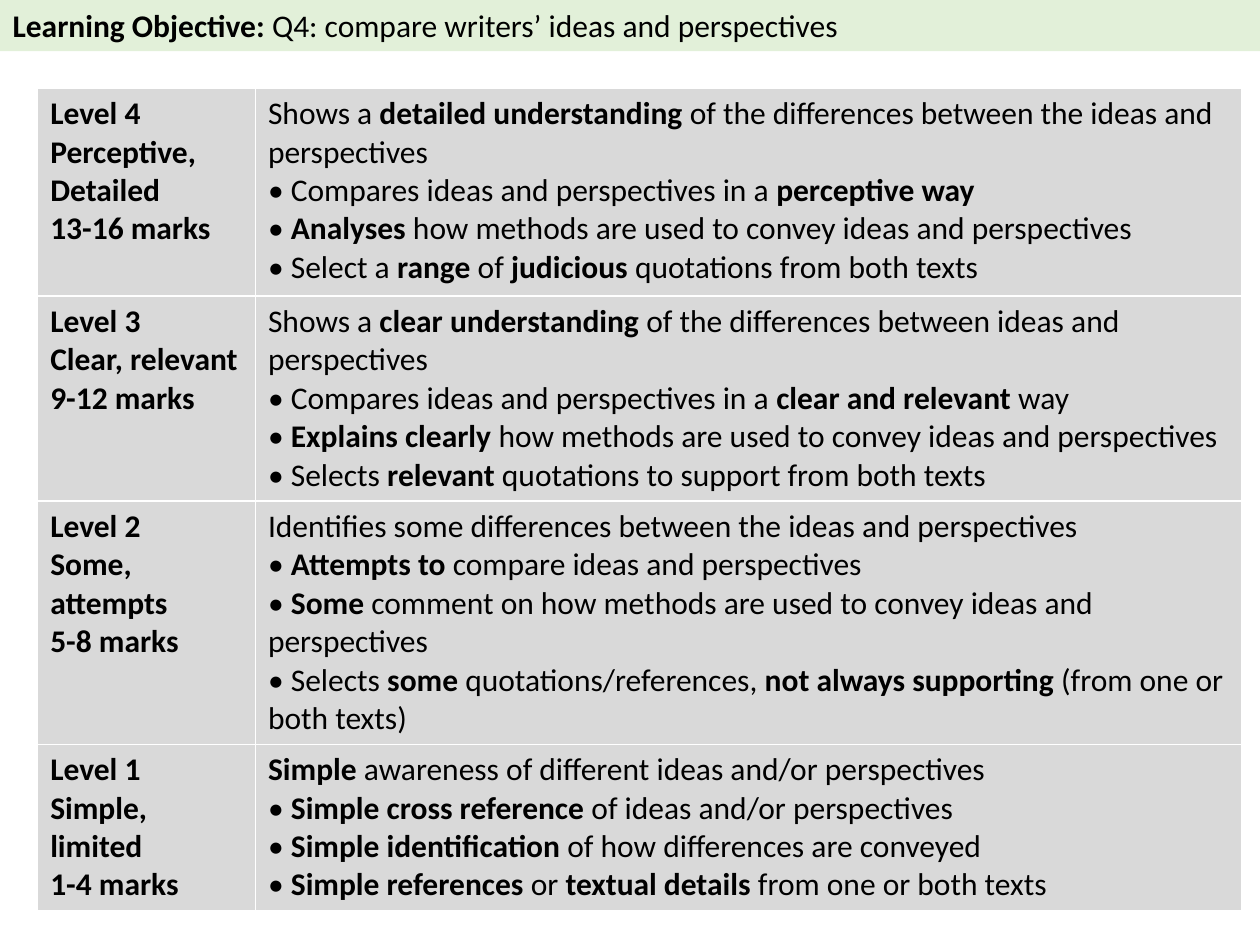
from dataclasses import dataclass

import pptx
import pptx.dml.color
import pptx.enum.text
import pptx.util
from pptx.util import Cm

BLACK = pptx.dml.color.RGBColor(0x00, 0x00, 0x00)
PALE_GREEN = pptx.dml.color.RGBColor(0xE2, 0xF0, 0xD9)
LIGHT_GREY = pptx.dml.color.RGBColor(0xD9, 0xD9, 0xD9)

FONT_FORMAT = {"name": "Calibri", "size": pptx.util.Pt(18)}
COLUMN_WIDTHS = (Cm(4.39), Cm(19.89))


@dataclass
class Level:
    """One band of the mark scheme; ** switches bold on and off."""
    label: list[str]
    summary: str
    criteria: list[str]
    height: pptx.util.Length


LEVELS = [
    Level(
        ["Level 4", "Perceptive, Detailed", "13-16 marks"],
        "Shows a **detailed understanding** of the differences between the ideas and perspectives",
        ["Compares ideas and perspectives in a **perceptive way**",
         "**Analyses** how methods are used to convey ideas and perspectives",
         "Select a **range** of **judicious** quotations from both texts"],
        Cm(4.19),
    ),
    Level(
        ["Level 3", "Clear, relevant", "9-12 marks"],
        "Shows a **clear understanding** of the differences between ideas and perspectives",
        ["Compares ideas and perspectives in a **clear and relevant** way",
         "**Explains clearly** how methods are used to convey ideas and perspectives",
         "Selects **relevant** quotations to support from both texts"],
        Cm(4.06),
    ),
    Level(
        ["Level 2", "Some, attempts", "5-8 marks"],
        "Identifies some differences between the ideas and perspectives",
        ["**Attempts to** compare ideas and perspectives",
         "**Some** comment on how methods are used to convey ideas and perspectives",
         "Selects **some** quotations/references, **not always supporting** (from one or both texts)"],
        Cm(4.83),
    ),
    Level(
        ["Level 1", "Simple, limited", "1-4 marks"],
        "**Simple** awareness of different ideas and/or perspectives",
        ["**Simple cross reference** of ideas and/or perspectives",
         "**Simple identification** of how differences are conveyed",
         "**Simple references** or **textual details** from one or both texts"],
        Cm(3.3),
    ),
]


def write_lines(text_frame, lines: list[str]) -> None:
    """Write one paragraph per line, with the parts between ** in bold."""
    for index, line in enumerate(lines):
        paragraph = text_frame.add_paragraph() if index else text_frame.paragraphs[0]
        paragraph.alignment = pptx.enum.text.PP_ALIGN.LEFT
        for part_index, part in enumerate(line.split("**")):
            if not part:
                continue
            run = paragraph.add_run()
            run.text = part
            for name, value in FONT_FORMAT.items():
                setattr(run.font, name, value)
            run.font.bold = part_index % 2 == 1
            run.font.color.rgb = BLACK


def add_objective(slide) -> None:
    title = slide.shapes.title
    bounds = {"left": 0, "top": 0, "width": Cm(25.4), "height": Cm(1.03)}
    for name, value in bounds.items():
        setattr(title, name, value)
    title.fill.solid()
    title.fill.fore_color.rgb = PALE_GREEN
    frame_format = {
        "word_wrap": True,
        "auto_size": pptx.enum.text.MSO_AUTO_SIZE.NONE,
        "vertical_anchor": pptx.enum.text.MSO_ANCHOR.TOP,
    }
    for name, value in frame_format.items():
        setattr(title.text_frame, name, value)
    write_lines(title.text_frame,
                ["**Learning Objective:** Q4: compare writers’ ideas and perspectives"])


def add_mark_scheme(slide, levels: list[Level]) -> None:
    table = slide.shapes.add_table(
        len(levels), len(COLUMN_WIDTHS), Cm(0.76), Cm(1.78),
        sum(COLUMN_WIDTHS), sum(level.height for level in levels),
    ).table
    table.horz_banding = False
    for column, width in zip(table.columns, COLUMN_WIDTHS):
        column.width = width
    for row, level in zip(table.rows, levels):
        row.height = level.height
        label = [f"**{line}**" for line in level.label]
        description = [level.summary] + [f"• {line}" for line in level.criteria]
        for cell, lines in zip(row.cells, (label, description)):
            cell.fill.solid()
            cell.fill.fore_color.rgb = LIGHT_GREY
            write_lines(cell.text_frame, lines)


def main() -> None:
    presentation = pptx.Presentation()
    presentation.slide_width = Cm(25.4)
    presentation.slide_height = Cm(19.05)
    title_only = presentation.slide_layouts[5]
    slide = presentation.slides.add_slide(title_only)
    add_objective(slide)
    add_mark_scheme(slide, LEVELS)
    presentation.save("out.pptx")


if __name__ == "__main__":
    main()
